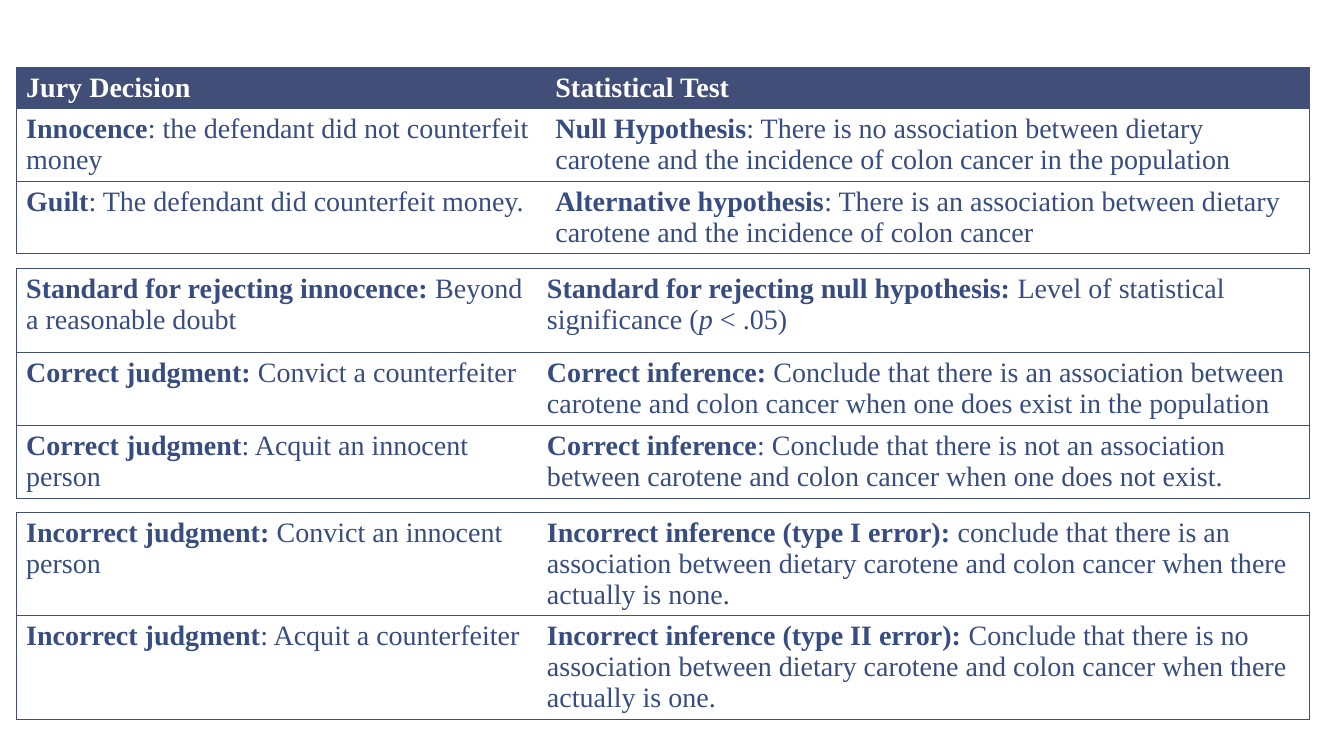
import pptx
import pptx.dml.color
import pptx.oxml
import pptx.oxml.ns
import pptx.util

COLORS = {"rule": "414E77", "text": "374C81", "header_text": "FFFFFF"}
FONT_NAME = "Times New Roman"
NO_STYLE = "{2D5ABB26-0587-4C30-8999-92F81FD0307C}"

presentation = pptx.Presentation()
presentation.slide_width = pptx.util.Inches(13.33)
presentation.slide_height = pptx.util.Inches(7.5)
slide = presentation.slides.add_slide(presentation.slide_layouts[6])

# Grid of the slide: 80 columns by 90 rows
COLUMN = presentation.slide_width / 80
ROW = presentation.slide_height / 90
LEFT = 0.96
ONE_LINE, TWO_LINES, THREE_LINES = 4.9, 8.65, 12.25

# Each table: top, column widths, and rows of (height, left cell, right cell).
# The parts of a cell are bold, plain, italic and plain, in this order.
TABLES = [
    (8, (31.5, 45.5), [
        (ONE_LINE, ["Jury Decision"], ["Statistical Test"]),
        (TWO_LINES,
         ["Innocence", ": the defendant did not counterfeit money"],
         ["Null Hypothesis", ": There is no association between dietary carotene "
          "and the incidence of colon cancer in the population"]),
        (TWO_LINES,
         ["Guilt", ": The defendant did counterfeit money."],
         ["Alternative hypothesis", ": There is an association between dietary "
          "carotene and the incidence of colon cancer"]),
    ]),
    (32, (31, 46), [
        (10,
         ["Standard for rejecting innocence: ", "Beyond a reasonable doubt"],
         ["Standard for rejecting null hypothesis: ",
          "Level of statistical significance (", "p", " < .05)"]),
    ]),
    (42, (31, 46), [
        (TWO_LINES,
         ["Correct judgment: ", "Convict a counterfeiter"],
         ["Correct inference: ", "Conclude that there is an association between "
          "carotene and colon cancer when one does exist in the population"]),
        (TWO_LINES,
         ["Correct judgment", ": Acquit an innocent person"],
         ["Correct inference", ": Conclude that there is not an association between "
          "carotene and colon cancer when one does not exist."]),
    ]),
    (61, (31, 46), [
        (THREE_LINES,
         ["Incorrect judgment: ", "Convict an innocent person"],
         ["Incorrect inference (type I error):", " conclude that there is an "
          "association between dietary carotene and colon cancer when there "
          "actually is none."]),
        (THREE_LINES,
         ["Incorrect judgment", ": Acquit a counterfeiter"],
         ["Incorrect inference (type II error): ", "Conclude that there is no "
          "association between dietary carotene and colon cancer when there "
          "actually is one."]),
    ]),
]


def add_borders(cell, sides):
    """Rule the given sides, named in the order L, R, T, B."""
    properties = cell._tc.get_or_add_tcPr()
    for side in sides:
        properties.append(pptx.oxml.parse_xml(
            f'<a:ln{side} {pptx.oxml.ns.nsdecls("a")} w="6350"><a:solidFill>'
            f'<a:srgbClr val="{COLORS["rule"]}"/></a:solidFill></a:ln{side}>'))


def fill_cell(cell, parts, is_header):
    if is_header:
        cell.fill.solid()
        cell.fill.fore_color.rgb = pptx.dml.color.RGBColor.from_string(COLORS["rule"])
    else:
        cell.fill.background()
    color = COLORS["header_text" if is_header else "text"]
    paragraph = cell.text_frame.paragraphs[0]
    for index, part in enumerate(parts):
        run = paragraph.add_run()
        run.text = part
        run.font.name = FONT_NAME
        run.font.size = pptx.util.Pt(20)
        run.font.bold = index == 0
        run.font.italic = index == 2
        run.font.color.rgb = pptx.dml.color.RGBColor.from_string(color)


for top, widths, rows in TABLES:
    height = sum(row[0] for row in rows)
    frame = slide.shapes.add_table(
        len(rows), 2, int(LEFT * COLUMN), int(top * ROW),
        int(sum(widths) * COLUMN), int(height * ROW))
    table = frame.table
    table.horz_banding = False
    table.first_row = False
    for style in frame.element.iter(pptx.oxml.ns.qn("a:tableStyleId")):
        style.text = NO_STYLE
    for column, width in zip(table.columns, widths):
        column.width = int(width * COLUMN)
    for row_index, (row_height, *cells) in enumerate(rows):
        table.rows[row_index].height = int(row_height * ROW)
        for column_index, parts in enumerate(cells):
            cell = table.cell(row_index, column_index)
            add_borders(cell, "LTB" if column_index == 0 else "RTB")
            fill_cell(cell, parts, is_header=len(parts) == 1)

presentation.save("out.pptx")
